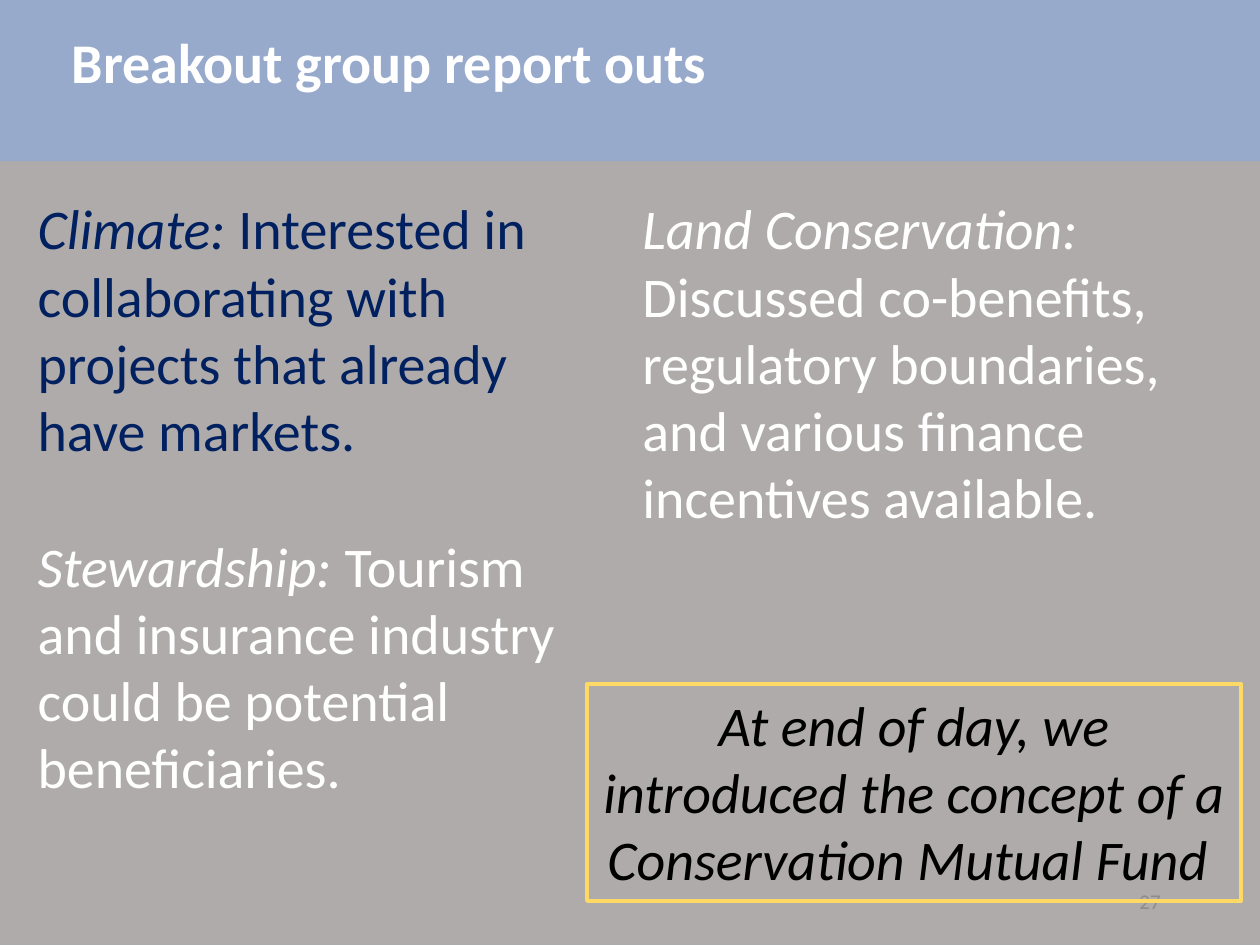
from dataclasses import dataclass

from lxml import etree
from pptx import Presentation
from pptx.dml.color import RGBColor
from pptx.enum.shapes import MSO_SHAPE as Shape
from pptx.enum.text import MSO_ANCHOR as Anchor, MSO_AUTO_SIZE as AutoSize, PP_ALIGN as Align
from pptx.oxml.ns import qn
from pptx.util import Inches, Pt

WHITE, NAVY, BLACK = "FFFFFF", "002060", "000000"
LINE_HEIGHT = 39


@dataclass
class Report:
    topic: str
    finding: str
    color: str = WHITE


@dataclass
class Column:
    left: float
    height: float
    reports: list[Report]


COLUMNS = [
    Column(0.2, 4.95, [
        Report("Climate: ", "Interested in collaborating with projects that already have markets.", NAVY),
        Report("Stewardship: ", "Tourism and insurance industry could be potential beneficiaries."),
    ]),
    Column(5, 3.33, [
        Report("Land Conservation: ", "Discussed co-benefits, regulatory boundaries, "
               "and various finance incentives available."),
    ]),
]


def rgb(color: str) -> RGBColor:
    return RGBColor.from_string(color)


def style(r, color: str, size: float = 32, bold: bool = False, italic: bool = False) -> None:
    f = r.font
    f.name, f.size, f.bold, f.italic = "Calibri", Pt(size), bold, italic
    f.color.rgb = rgb(color)


def place(sp, left: float, top: float, width: float, height: float) -> None:
    sp.left, sp.top, sp.width, sp.height = map(Inches, (left, top, width, height))


def add_rect(s, left: float, top: float, width: float, height: float):
    sp = s.shapes.add_shape(Shape.RECTANGLE, *map(Inches, (left, top, width, height)))
    sp.shadow.inherit = False
    return sp


def add_text(s, left: float, top: float, width: float, height: float):
    sp = s.shapes.add_textbox(*map(Inches, (left, top, width, height)))
    sp.text_frame.word_wrap = True
    return sp.text_frame


def add_band(s) -> None:
    sp = add_rect(s, 0, 0, 10.03, 1.28)
    sp.fill.solid()
    sp.fill.fore_color.rgb = rgb("8FAADC")
    sp.line.fill.background()
    color = sp.element.spPr.find(qn("a:solidFill"))[0]
    etree.SubElement(color, qn("a:alpha")).set("val", "69000")
    s.shapes.title.element.addprevious(sp.element)


def add_title(s, text: str) -> None:
    sp = s.shapes.title
    place(sp, 0.47, 0.17, 9.05, 0.66)
    tf = sp.text_frame
    tf.text = text
    tf.word_wrap = True
    tf.auto_size = AutoSize.NONE
    tf.vertical_anchor = Anchor.TOP
    p = tf.paragraphs[0]
    p.alignment = Align.LEFT
    style(p.runs[0], WHITE, bold=True)


def add_column(s, column: Column) -> None:
    tf = add_text(s, column.left, 1.49, 4.8, column.height)
    for i, report in enumerate(column.reports):
        p = tf.add_paragraph() if i else tf.paragraphs[0]
        if i:
            p.space_before = Pt(LINE_HEIGHT)
        for text, italic in ((report.topic, True), (report.finding, False)):
            r = p.add_run()
            r.text = text
            style(r, report.color, italic=italic)


def add_callout(s, text: str) -> None:
    sp = add_rect(s, 4.66, 5.43, 5.19, 1.72)
    sp.fill.background()
    sp.line.color.rgb = rgb("FFD966")
    sp.line.width = Pt(2.25)
    tf = sp.text_frame
    tf.text = text
    tf.word_wrap = True
    tf.vertical_anchor = Anchor.TOP
    p = tf.paragraphs[0]
    p.alignment = Align.CENTER
    style(p.runs[0], BLACK, italic=True)


def add_page_number(s, number: str) -> None:
    tf = add_text(s, 7.06, 6.95, 2.25, 0.4)
    tf.text = number
    tf.vertical_anchor = Anchor.MIDDLE
    p = tf.paragraphs[0]
    p.alignment = Align.RIGHT
    style(p.runs[0], "8C8C8C", size=12)


def main() -> None:
    prs = Presentation()
    prs.slide_width, prs.slide_height = Inches(10), Inches(7.5)
    s = prs.slides.add_slide(prs.slide_layouts[5])
    s.background.fill.solid()
    s.background.fill.fore_color.rgb = rgb("AFABAB")
    add_band(s)
    add_title(s, "Breakout group report outs")
    add_page_number(s, "27")
    for column in COLUMNS:
        add_column(s, column)
    add_callout(s, "At end of day, we introduced the concept of a Conservation Mutual Fund ")
    prs.save("out.pptx")


if __name__ == "__main__":
    main()
